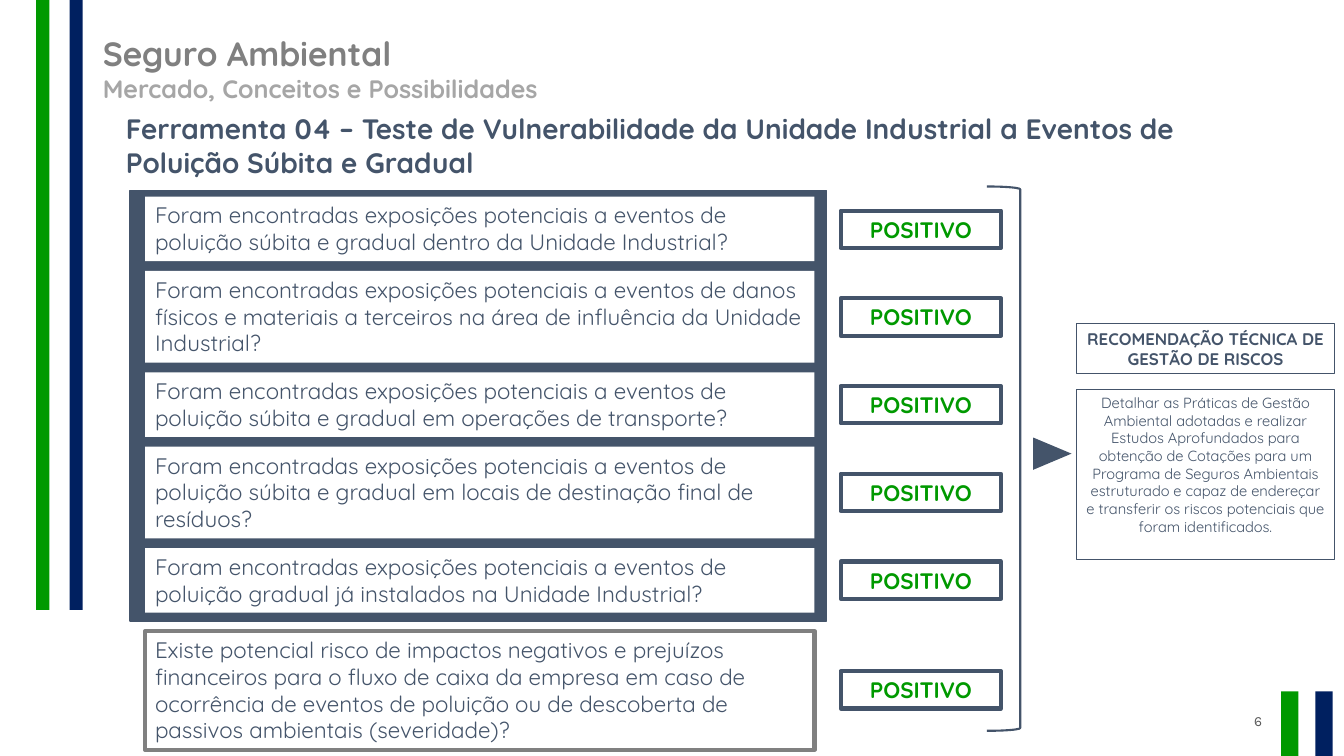
from pptx import Presentation, util as u
from pptx.dml.color import RGBColor
from pptx.enum import shapes, text

FONT = "Quicksand"
GREEN, NAVY, SLATE, GREY, WHITE = "009900", "002060", "44546A", "808080", "FFFFFF"
WIDTH, HEIGHT = u.Inches(13.33), u.Inches(7.5)

QUESTION_X, QUESTION_WIDTH, QUESTION_GAP = 10.8, 49.8, 1.3
ANSWER_TOP, ANSWER_STEP = 27.87, 11.6
SEVERITY_TOP, SEVERITY_ANSWER_TOP = 83.47, 88.8

# Each question with its number of text lines
QUESTIONS = [
    ("Foram encontradas exposições potenciais a eventos de poluição súbita e gradual "
     "dentro da Unidade Industrial?", 2),
    ("Foram encontradas exposições potenciais a eventos de danos físicos e materiais "
     "a terceiros na área de influência da Unidade Industrial?", 3),
    ("Foram encontradas exposições potenciais a eventos de poluição súbita e gradual "
     "em operações de transporte?", 2),
    ("Foram encontradas exposições potenciais a eventos de poluição súbita e gradual "
     "em locais de destinação final de resíduos?", 3),
    ("Foram encontradas exposições potenciais a eventos de poluição gradual já "
     "instalados na Unidade Industrial?", 2),
]
SEVERITY = ("Existe potencial risco de impactos negativos e prejuízos financeiros para o "
            "fluxo de caixa da empresa em caso de ocorrência de eventos de poluição ou de "
            "descoberta de passivos ambientais (severidade)?")
RECOMMENDATION = ("Detalhar as Práticas de Gestão Ambiental adotadas e realizar Estudos "
                  "Aprofundados para obtenção de Cotações para um Programa de Seguros "
                  "Ambientais estruturado e capaz de endereçar e transferir os riscos "
                  "potenciais que foram identificados.")


def rgb(code):
    return RGBColor.from_string(code)


def area(x, y, width, height):
    """Turn percentages of the slide's size into lengths."""
    return [u.Emu(round(share * side / 100))
            for share, side in zip((x, y, width, height), (WIDTH, HEIGHT) * 2)]


def write(frame, content, size=16, color=SLATE, bold=False, align="LEFT",
          anchor="TOP", font=FONT, new_paragraph=False):
    frame.word_wrap = True
    frame.auto_size = text.MSO_AUTO_SIZE.NONE
    frame.vertical_anchor = text.MSO_ANCHOR[anchor]
    paragraph = frame.add_paragraph() if new_paragraph else frame.paragraphs[0]
    paragraph.alignment = text.PP_ALIGN[align]
    paragraph.space_before = u.Pt(0)
    run = paragraph.add_run()
    run.text = content
    run.font.name, run.font.size, run.font.bold = font, u.Pt(size), bold
    run.font.color.rgb = rgb(color)


def draw(slide, bounds, kind="RECTANGLE", fill=None, line=None, weight=1):
    shape = slide.shapes.add_shape(shapes.MSO_SHAPE[kind], *area(*bounds))
    shape.shadow.inherit = False
    if fill:
        shape.fill.solid()
        shape.fill.fore_color.rgb = rgb(fill)
    else:
        shape.fill.background()
    if line:
        shape.line.color.rgb = rgb(line)
        shape.line.width = u.Pt(weight)
    else:
        shape.line.fill.background()
    return shape


def label(slide, bounds, content, **text_format):
    write(slide.shapes.add_textbox(*area(*bounds)).text_frame, content, **text_format)


def add_title(slide):
    title = slide.shapes.title
    title.left, title.top, title.width, title.height = area(6.9, 3.73, 73.43, 10.8)
    write(title.text_frame, "Seguro Ambiental", size=24, color=GREY, bold=True)
    write(title.text_frame, "Mercado, Conceitos e Possibilidades", size=18,
          color="A6A6A6", bold=True, new_paragraph=True)


def add_question(slide, top, content, lines, **outline):
    """Draw a question as tall as its lines and return its bottom."""
    height = 1.33 + 3.6 * lines
    box = draw(slide, (QUESTION_X, top, QUESTION_WIDTH, height), fill=WHITE, **outline)
    write(box.text_frame, content)
    return top + height


def add_answer(slide, top):
    box = draw(slide, (62.55, top, 11.93, 4.93), fill=WHITE, line=SLATE, weight=3)
    write(box.text_frame, "POSITIVO", color=GREEN, bold=True, align="CENTER",
          anchor="MIDDLE")


def add_recommendation(slide, top, height, content, **text_format):
    box = draw(slide, (80.1, top, 19.2, height), line=SLATE, weight=0.75)
    write(box.text_frame, content, align="CENTER", **text_format)


def main():
    deck = Presentation()
    deck.slide_width, deck.slide_height = WIDTH, HEIGHT
    slide = deck.slides.add_slide(deck.slide_layouts[5])

    for color, side_x, corner_x in ((GREEN, 2.7, 95.33), (NAVY, 5.18, 97.88)):
        draw(slide, (side_x, -0.13, 0.98, 80.8), fill=color)
        draw(slide, (corner_x, 91.47, 1.28, 8.8), fill=color)
    label(slide, (72.15, 92.67, 22.5, 5.33), "6", size=10, color="595959",
          align="RIGHT", anchor="MIDDLE", font="Karla")
    add_title(slide)
    label(slide, (8.63, 14.13, 86.78, 10.27),
          "Ferramenta 04 – Teste de Vulnerabilidade da Unidade Industrial a Eventos de "
          "Poluição Súbita e Gradual", size=20, bold=True)

    draw(slide, (9.68, 25.2, 51.83, 56.93), fill=SLATE, line=SLATE)
    top = 26
    for row, (question, lines) in enumerate(QUESTIONS):
        top = add_question(slide, top, question, lines) + QUESTION_GAP
        add_answer(slide, ANSWER_TOP + row * ANSWER_STEP)
    add_question(slide, SEVERITY_TOP, SEVERITY, 4, line=GREY, weight=3)
    add_answer(slide, SEVERITY_ANSWER_TOP)

    draw(slide, (73.43, 24.67, 2.48, 72), "RIGHT_BRACKET", line=SLATE, weight=1.5)
    pointer = draw(slide, (77.1, 57.47, 2.4, 5.07), "ISOSCELES_TRIANGLE", fill=SLATE)
    pointer.rotation = 90
    add_recommendation(slide, 42.8, 6.67, "RECOMENDAÇÃO TÉCNICA DE GESTÃO DE RISCOS",
                       size=12, bold=True)
    add_recommendation(slide, 51.47, 22.53, RECOMMENDATION, size=10.5)
    deck.save("out.pptx")


if __name__ == "__main__":
    main()
